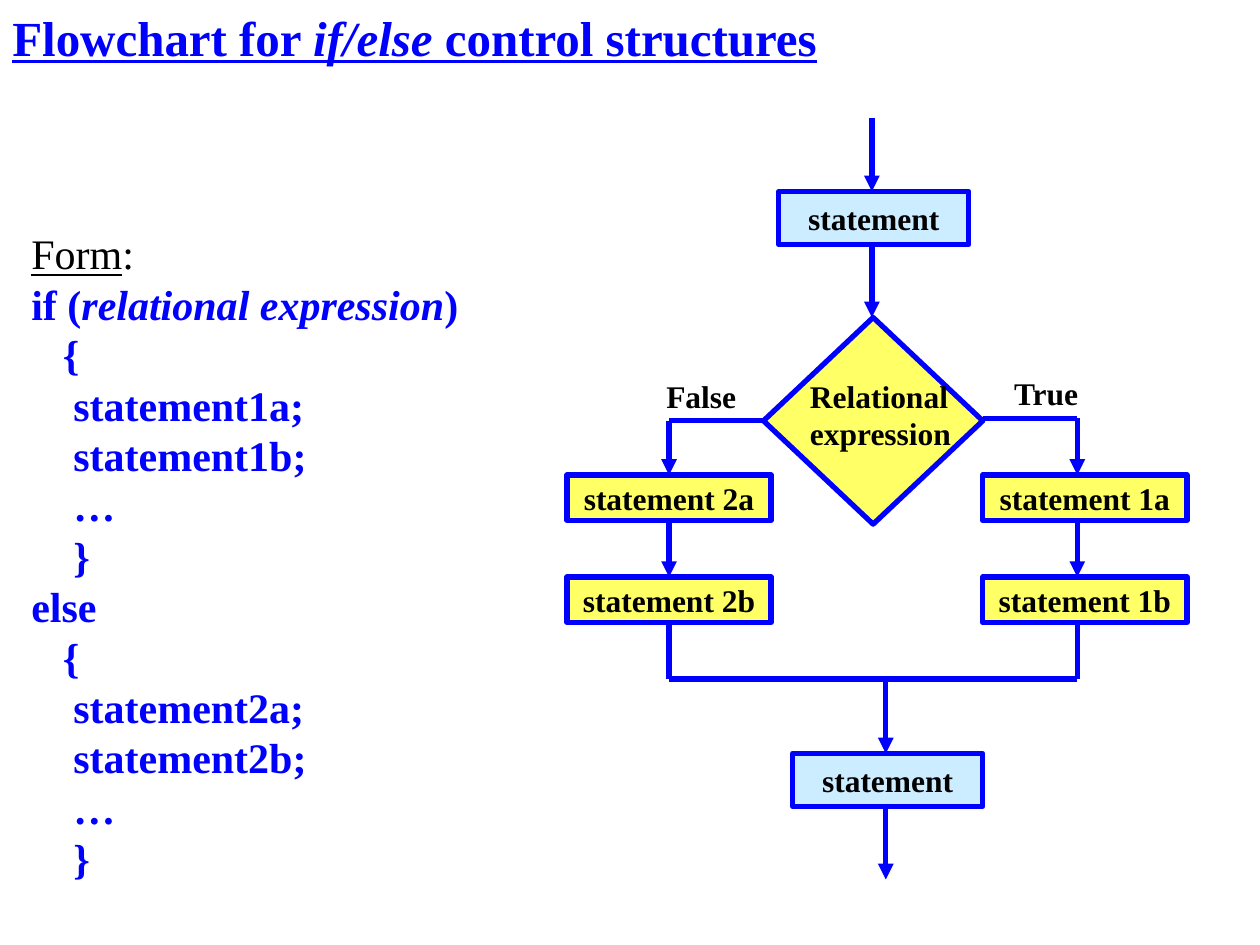
from lxml import etree
from pptx import Presentation
from pptx.dml.color import RGBColor
from pptx.enum.shapes import MSO_CONNECTOR, MSO_SHAPE
from pptx.enum.text import MSO_ANCHOR, PP_ALIGN
from pptx.oxml.ns import qn
from pptx.util import Inches, Pt

RECT, DIAMOND = MSO_SHAPE.RECTANGLE, MSO_SHAPE.DIAMOND
STRAIGHT = MSO_CONNECTOR.STRAIGHT
MIDDLE, TOP = MSO_ANCHOR.MIDDLE, MSO_ANCHOR.TOP
LEFT, CENTER = PP_ALIGN.LEFT, PP_ALIGN.CENTER

BLUE = RGBColor(0x00, 0x00, 0xFF)
BLACK = RGBColor(0x00, 0x00, 0x00)
YELLOW = RGBColor(0xFF, 0xFF, 0x66)
PALE_BLUE = RGBColor(0xCC, 0xEC, 0xFF)
FONT = "Times New Roman"
LINE_WIDTH = Pt(3)

# Each line of the form: indent in points, text
IF_BODY = [(18, "{"), (24, "statement1a;"), (24, "statement1b;"), (24, "…"), (24, "}")]
ELSE_BODY = [(18, "{"), (24, "statement2a;"), (24, "statement2b;"), (24, "…"), (24, "}")]


def add_run(p, text, size, color=BLACK, bold=True, italic=False, underline=False):
    r = p.add_run()
    r.text = text
    f = r.font
    f.name, f.size, f.bold, f.italic, f.underline = FONT, Pt(size), bold, italic, underline
    f.color.rgb = color


def add_lines(tf, lines, size, align=LEFT):
    """Write one paragraph per line; a line is (indent, [(text, run options)])."""
    for i, (indent, runs) in enumerate(lines):
        p = tf.paragraphs[0] if i == 0 else tf.add_paragraph()
        p.alignment = align
        p.line_spacing = Pt(size * 1.2)
        if indent:
            p._p.get_or_add_pPr().set("marL", str(Pt(indent)))
        for text, options in runs:
            add_run(p, text, size, **options)


def add_text(s, box, lines, size, anchor=TOP, wrap=False):
    tf = s.shapes.add_textbox(*map(Inches, box)).text_frame
    tf.word_wrap = wrap
    tf.vertical_anchor = anchor
    add_lines(tf, lines, size)


def add_label(s, box, *texts):
    add_text(s, box, [(0, [(text, {})]) for text in texts], 18)


def add_node(s, box, fill, text=None, kind=RECT):
    sp = s.shapes.add_shape(kind, *map(Inches, box))
    sp.shadow.inherit = False
    sp.fill.solid()
    sp.fill.fore_color.rgb = fill
    sp.line.color.rgb = BLUE
    sp.line.width = LINE_WIDTH
    if text:
        tf = sp.text_frame
        tf.word_wrap = False
        tf.vertical_anchor = MIDDLE
        add_lines(tf, [(0, [(text, {})])], 18, CENTER)


def add_line(s, x1, y1, x2, y2, arrow=False):
    c = s.shapes.add_connector(STRAIGHT, *map(Inches, (x1, y1, x2, y2)))
    c.line.color.rgb = BLUE
    c.line.width = LINE_WIDTH
    if arrow:
        etree.SubElement(c.line._get_or_add_ln(), qn("a:tailEnd"), type="triangle")
    etree.SubElement(c._element.spPr, qn("a:effectLst"))


def add_title(s, box):
    style = {"color": BLUE, "underline": True}
    runs = [("Flowchart for ", style), ("if/else", {**style, "italic": True}),
            (" control structures", style)]
    add_text(s, box, [(0, runs)], 28, MIDDLE, True)


def add_form(s, box):
    blue = {"color": BLUE}
    lines = [(0, [("Form", {"bold": False, "underline": True}), (":", {"bold": False})]),
             (0, [("if (", blue), ("relational expression", {**blue, "italic": True}),
                  (")", blue)])]
    for indent, text in IF_BODY + [(0, "else")] + ELSE_BODY:
        lines.append((indent, [(text, blue)]))
    add_text(s, box, lines, 24)


def add_step(s, left, top, x):
    """A common statement with an arrow in above it and an arrow out below it."""
    w, h, arrow = 1.51, 0.42, 0.58
    add_node(s, (left, top, w, h), PALE_BLUE, "statement")
    add_line(s, x, top - arrow, x, top, True)
    add_line(s, x, top + h, x, top + h + arrow, True)


def add_branch(s, left, x, corner_x, corner_y, merge_y, names):
    """Two stacked statements, fed from a diamond corner and leading to the merge line."""
    top, w, h, pitch = 3.77, 1.62, 0.36, 0.81
    add_line(s, x, corner_y, corner_x, corner_y)
    add_line(s, x, corner_y, x, top, True)
    add_line(s, x, top + h, x, top + pitch, True)
    add_line(s, x, top + pitch + h, x, merge_y)
    for i, name in enumerate(names):
        add_node(s, (left, top + i * pitch, w, h), YELLOW, name)


def add_flowchart(s, box):
    left, top, w, h = box
    merge_y = top + 4.45
    diamond_x, diamond_w = left + 1.56, 1.74
    false_x, true_x = left + 0.81, left + 4.05

    add_node(s, (diamond_x, top + 1.58, diamond_w, 1.64), YELLOW, kind=DIAMOND)
    add_label(s, (left + 1.83, top + 2, 1.33, 0.7), "Relational", "expression")
    add_step(s, left + 1.68, top + 0.58, left + 2.42)
    add_step(s, left + 1.79, top + h - 1, left + 2.53)

    add_branch(s, left, false_x, diamond_x, top + 2.4, merge_y,
               ("statement 2a", "statement 2b"))
    add_branch(s, left + w - 1.62, true_x, diamond_x + diamond_w, top + 2.38, merge_y,
               ("statement 1a", "statement 1b"))
    add_line(s, false_x, merge_y, true_x, merge_y)
    add_label(s, (left + 0.69, top + 2, 0.76, 0.4), "False")
    add_label(s, (left + 3.45, top + 1.98, 0.73, 0.4), "True")


def main():
    prs = Presentation()
    prs.slide_width, prs.slide_height = Inches(10), Inches(7.5)
    s = prs.slides.add_slide(prs.slide_layouts[6])
    add_title(s, (0, 0, 8.5, 0.58))
    add_form(s, (0.15, 1.76, 3.59, 5.29))
    add_flowchart(s, (4.5, 0.94, 4.92, 6.04))
    prs.save("out.pptx")


if __name__ == "__main__":
    main()
